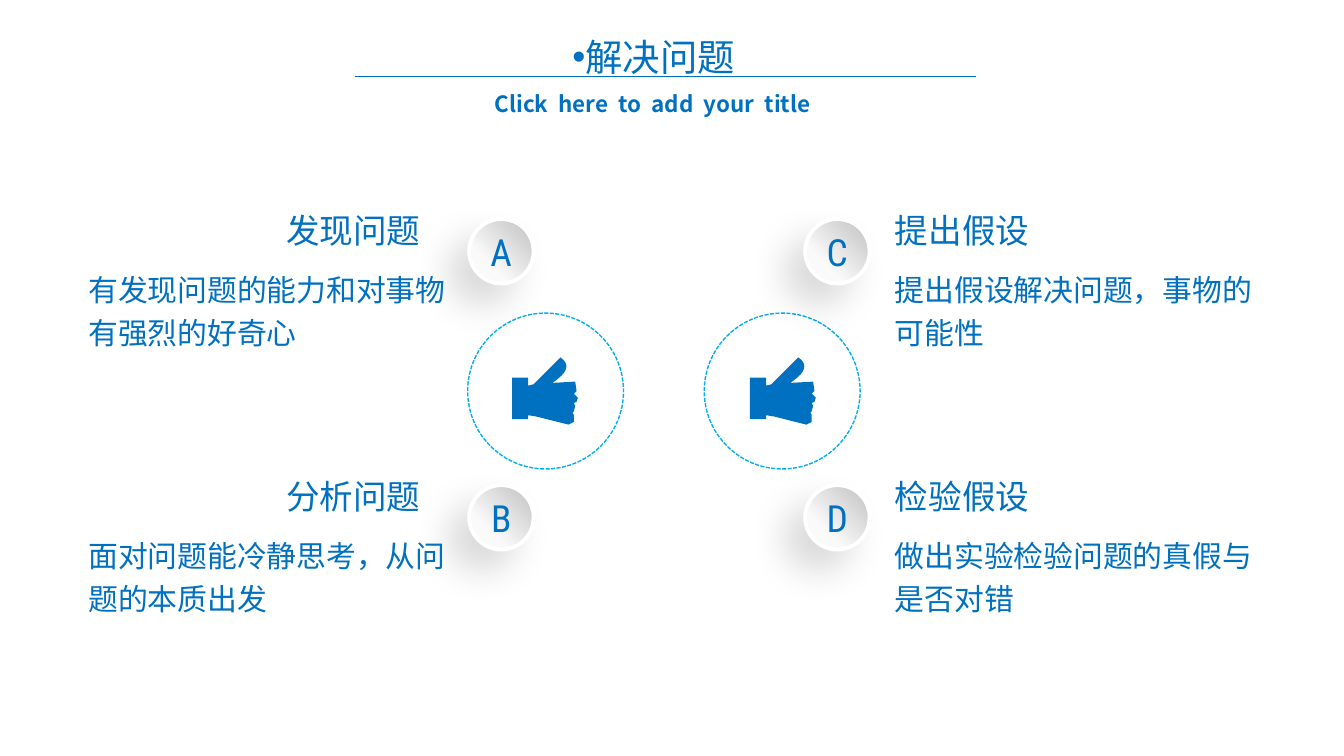
import pptx
import pptx.dml.color
import pptx.enum.dml
import pptx.enum.shapes
import pptx.enum.text
import pptx.oxml
import pptx.oxml.ns
import pptx.util
from lxml import etree

# Content
TITLE = "解决问题"
SUBTITLE = "Click  here  to  add  your  title"
# letter, column, row, heading, body
STEPS = [
    ("A", 0, 0, "发现问题", "有发现问题的能力和对事物有强烈的好奇心"),
    ("B", 0, 1, "分析问题", "面对问题能冷静思考，从问题的本质出发"),
    ("C", 1, 0, "提出假设", "提出假设解决问题，事物的可能性"),
    ("D", 1, 1, "检验假设", "做出实验检验问题的真假与是否对错"),
]

# Grid, in inches
SLIDE_WIDTH = 10
SLIDE_HEIGHT = SLIDE_WIDTH * 9 / 16
BADGE_COLUMNS = (3.49, 5.99)
HEADING_COLUMNS = (2.03, 6.56)
BODY_COLUMNS = (0.56, 6.56)
RING_COLUMNS = (3.48, 5.24)
HAND_COLUMNS = (3.81, 5.58)
FIRST_ROW, ROW_PITCH = 1.63, 1.98
BADGE_SIZE, RING_SIZE = 0.48, 1.16
RING_TOP, HAND_TOP = 2.33, 2.66

# Hand outline from its left top corner, ending at the tip of the thumb
HAND = [
    (0.47, 0.18), (0.48, 0.25), (0.46, 0.27), (0.49, 0.3), (0.48, 0.33),
    (0.46, 0.34), (0.47, 0.36), (0.46, 0.4), (0.45, 0.41), (0.46, 0.43),
    (0.46, 0.48), (0.42, 0.5), (0.18, 0.44), (0.12, 0.43), (0.12, 0.46),
    (0, 0.46), (0, 0.15), (0.12, 0.15), (0.12, 0.21), (0.16, 0.2), (0.36, 0),
]
THUMB_CURVE = [(0.36, 0), (0.46, 0.07), (0.37, 0.14), (0.3, 0.19)]
CURVE_STEPS = 12

COLORS = {
    "blue": "0070C0", "ring": "01AEEE", "white": "FFFFFF",
    "badge_dark": "BFBFBF", "badge_light": "FAFAFA", "shadow": "000000",
}
SANS, HEADING_FONT, LETTER_FONT = "Noto Sans CJK SC", "Noto Sans CJK JP", "Roboto Condensed"
FORMATS = {
    "title": {"size": 20, "name": SANS},
    "subtitle": {"size": 12, "name": SANS, "bold": True},
    "heading": {"size": 18, "name": HEADING_FONT},
    "body": {"size": 16, "name": SANS},
    "letter": {"size": 20, "name": LETTER_FONT},
}

inches = pptx.util.Inches


def color(name):
    return pptx.dml.color.RGBColor.from_string(COLORS[name])


def add_text(slide, text, style, box, wrap=True, spacing=None, centered=False):
    shape = slide.shapes.add_textbox(*map(inches, box))
    frame = shape.text_frame
    frame.word_wrap = wrap
    frame.auto_size = pptx.enum.text.MSO_AUTO_SIZE.SHAPE_TO_FIT_TEXT
    paragraph = frame.paragraphs[0]
    if spacing:
        paragraph.line_spacing = spacing
    if centered:
        paragraph.alignment = pptx.enum.text.PP_ALIGN.CENTER
        frame.vertical_anchor = pptx.enum.text.MSO_ANCHOR.MIDDLE
    run = paragraph.add_run()
    run.text = text
    for attribute, value in FORMATS[style].items():
        setattr(run.font, attribute, pptx.util.Pt(value) if attribute == "size" else value)
    run.font.color.rgb = color("blue")
    east_asian = etree.SubElement(run.font._element, pptx.oxml.ns.qn("a:ea"))
    east_asian.set("typeface", FORMATS[style]["name"])
    return shape


def add_bullet(paragraph):
    properties = paragraph._p.get_or_add_pPr()
    properties.set("marL", "0")
    properties.set("indent", str(inches(-0.2)))
    for tag, attribute, value in (("a:buFont", "typeface", "Arial"), ("a:buChar", "char", "•")):
        etree.SubElement(properties, pptx.oxml.ns.qn(tag)).set(attribute, value)


def add_circle(slide, left, top, size, line_color, line_width):
    circle = slide.shapes.add_shape(
        pptx.enum.shapes.MSO_SHAPE.OVAL, *map(inches, (left, top, size, size)))
    circle.shadow.inherit = False
    circle.line.color.rgb = color(line_color)
    circle.line.width = pptx.util.Pt(line_width)
    return circle


def add_badge(slide, left, top):
    badge = add_circle(slide, left, top, BADGE_SIZE, "white", 2)
    badge.fill.gradient()
    badge.fill.gradient_angle = 225
    stops = zip(badge.fill.gradient_stops, (("badge_dark", 0), ("badge_light", 0.7)))
    for stop, (name, position) in stops:
        stop.color.rgb = color(name)
        stop.position = position
    effects = badge._element.spPr.find(pptx.oxml.ns.qn("a:effectLst"))
    effects.append(pptx.oxml.parse_xml(
        f'<a:outerShdw {pptx.oxml.ns.nsdecls("a")} blurRad="{pptx.util.Pt(20)}" '
        f'dist="{pptx.util.Pt(15)}" dir="8100000" algn="ctr" rotWithShape="0">'
        f'<a:srgbClr val="{COLORS["shadow"]}"><a:alpha val="15000"/></a:srgbClr>'
        '</a:outerShdw>'))


def curve_point(share):
    rest = 1 - share
    weights = (rest ** 3, 3 * rest ** 2 * share, 3 * rest * share ** 2, share ** 3)
    return tuple(sum(weight * point[axis] for weight, point in zip(weights, THUMB_CURVE))
                 for axis in (0, 1))


def add_hand(slide, left, top):
    thumb = [curve_point(step / CURVE_STEPS) for step in range(1, CURVE_STEPS + 1)]
    points = [(inches(left + x), inches(top + y)) for x, y in HAND + thumb]
    builder = slide.shapes.build_freeform(*points[0])
    builder.add_line_segments(points[1:], close=True)
    hand = builder.convert_to_shape()
    hand.shadow.inherit = False
    hand.fill.solid()
    hand.fill.fore_color.rgb = color("blue")
    hand.line.fill.background()


def main():
    presentation = pptx.Presentation()
    presentation.slide_width = inches(SLIDE_WIDTH)
    presentation.slide_height = inches(SLIDE_HEIGHT)
    slide = presentation.slides.add_slide(presentation.slide_layouts[6])

    # Title, rule and subtitle
    title = add_text(slide, TITLE, "title", (4.16, 0.14, 3.91, 0.47), spacing=1.2)
    add_bullet(title.text_frame.paragraphs[0])
    rule = slide.shapes.add_connector(
        pptx.enum.shapes.MSO_CONNECTOR.STRAIGHT, *map(inches, (2.64, 0.57, 7.26, 0.57)))
    rule.line.color.rgb = color("blue")
    rule.line.width = pptx.util.Pt(0.75)
    etree.SubElement(rule._element.spPr, pptx.oxml.ns.qn("a:effectLst"))
    subtitle = add_text(slide, SUBTITLE, "subtitle", (3.51, 0.62, 3.91, 0.3))
    subtitle.text_frame.margin_left = inches(0.17)

    # Dashed rings with a hand in each
    for ring_left, hand_left in zip(RING_COLUMNS, HAND_COLUMNS):
        ring = add_circle(slide, ring_left, RING_TOP, RING_SIZE, "ring", 0.75)
        ring.fill.background()
        ring.line.dash_style = pptx.enum.dml.MSO_LINE.SQUARE_DOT
        add_hand(slide, hand_left, HAND_TOP)

    # Lettered steps
    for letter, column, row, heading, body in STEPS:
        left, top = BADGE_COLUMNS[column], FIRST_ROW + row * ROW_PITCH
        add_badge(slide, left, top)
        add_text(slide, letter, "letter", (left + 0.06, top + 0.02, 0.36, 0.44),
                 wrap=False, centered=True)
        add_text(slide, heading, "heading",
                 (HEADING_COLUMNS[column], top - 0.12, 1.21, 0.4), wrap=False)
        add_text(slide, body, "body",
                 (BODY_COLUMNS[column], top + 0.29, 2.93, 0.75), spacing=1.2)

    presentation.save("out.pptx")


if __name__ == "__main__":
    main()
